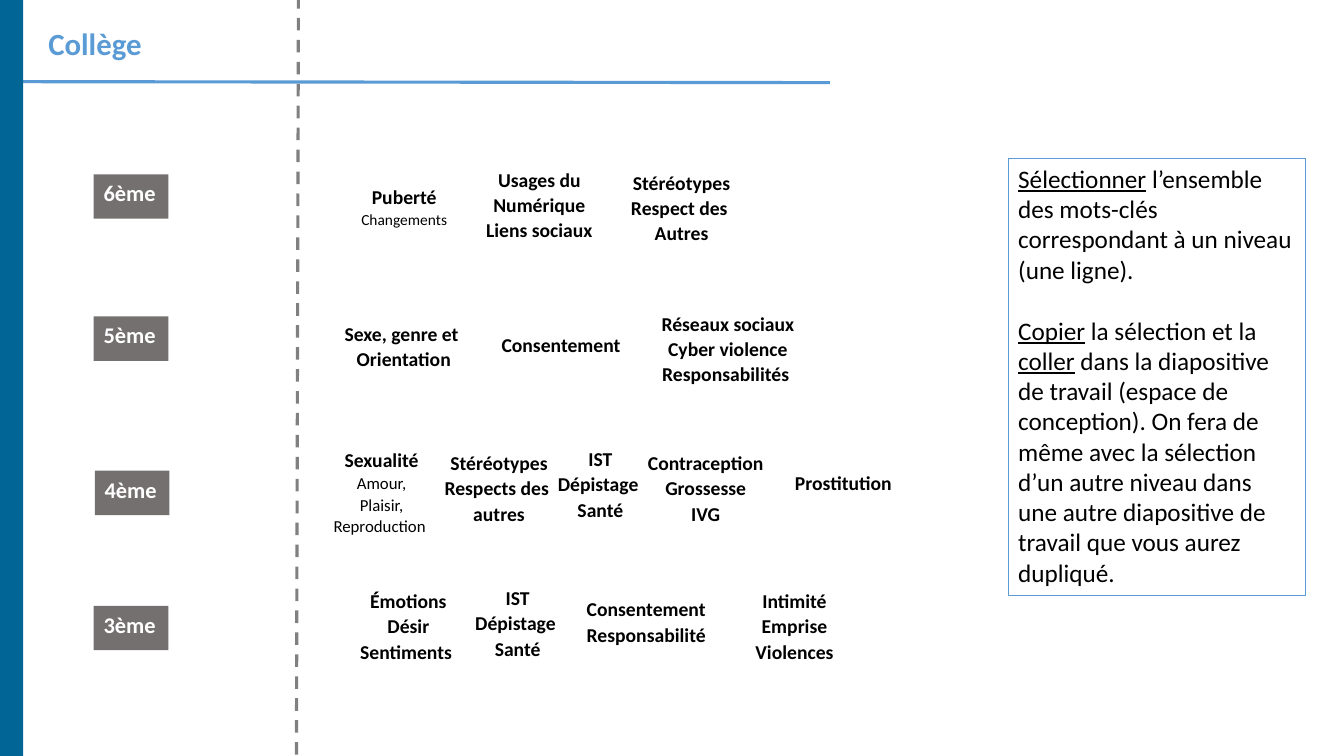
from lxml import etree
from pptx import Presentation
from pptx import util as u
from pptx.dml import color
from pptx.enum import dml, shapes, text
from pptx.oxml import ns

SCALE = 9144
FONT = "Calibri"
BLUE, GREY, TEAL = "5B9BD5", "747070", "016695"
BLACK, WHITE = "000000", "FFFFFF"
LEFT, MID = text.PP_ALIGN.LEFT, text.PP_ALIGN.CENTER

LABELS = [
    ("6ème", 93, 173),
    ("5ème", 93, 314),
    ("4ème", 94, 467),
    ("3ème", 93, 601),
]

TOPICS = [
    (348, 177, 106, ["Puberté"], ["Changements"], 11),
    (472, 160, 126, ["Usages du", "Numérique", "Liens sociaux"]),
    (617, 163, 118, ["Stéréotypes", "Respect des ", "Autres"]),
    (333, 313, 135, ["Sexe, genre et ", "Orientation"]),
    (487, 324, 139, ["Consentement"]),
    (646, 303, 152, ["Réseaux sociaux", "Cyber violence", "Responsabilités "]),
    (322, 438, 113, ["Sexualité"], ["Amour,", "Plaisir,", "Reproduction "], 12),
    (433, 441, 124, ["Stéréotypes", "Respects des ", "autres"]),
    (545, 437, 101, ["IST", "Dépistage ", "Santé"]),
    (632, 441, 136, ["Contraception", "Grossesse", "IVG"]),
    (778, 461, 117, ["Prostitution"]),
    (349, 578, 112, ["Émotions", "Désir", "Sentiments "]),
    (463, 575, 101, ["IST", "Dépistage ", "Santé"]),
    (739, 578, 98, ["Intimité", "Emprise", "Violences"]),
]

GUIDE = [
    [("Sélectionner", True),
     (" l’ensemble des mots-clés correspondant à un niveau (une ligne).", False)],
    [("Copier", True), (" la sélection et la ", False), ("coller", True),
     (" dans la diapositive de travail (espace de conception). On fera de "
      "même avec la sélection d’un autre niveau dans une autre diapositive "
      "de travail que vous aurez dupliqué.", False)],
]


def px(n):
    return u.Emu(n * SCALE)


def rgb(code):
    return color.RGBColor.from_string(code)


def add_run(para, words, size, tint=BLACK, bold=False, under=False):
    run = para.add_run()
    run.text = words
    font = run.font
    font.name, font.size = FONT, u.Pt(size)
    font.bold, font.underline = bold, under
    font.color.rgb = rgb(tint)


def next_para(frame, first, align):
    para = frame.paragraphs[0] if first else frame.add_paragraph()
    para.alignment = align
    return para


def add_title(slide, words):
    title = slide.shapes.title
    title.left, title.top, title.width, title.height = map(px, (38, -19, 114, 114))
    frame = title.text_frame
    frame.word_wrap = False
    frame.auto_size = text.MSO_AUTO_SIZE.NONE
    frame.vertical_anchor = text.MSO_ANCHOR.MIDDLE
    frame.margin_top = px(14)
    add_run(next_para(frame, True, LEFT), words, 22, BLUE, True)


def add_rule(slide, ends, tint, dash=None):
    rule = slide.shapes.add_connector(
        shapes.MSO_CONNECTOR.STRAIGHT, *map(px, ends))
    rule.line.color.rgb = rgb(tint)
    rule.line.width = u.Pt(2.25)
    if dash:
        rule.line.dash_style = dash
    props = rule._element.find(ns.qn("p:spPr"))
    etree.SubElement(props, ns.qn("a:effectLst"))


def add_rect(slide, area, fill, edge=None):
    rect = slide.shapes.add_shape(shapes.MSO_SHAPE.RECTANGLE, *map(px, area))
    rect.shadow.inherit = False
    rect.fill.solid()
    rect.fill.fore_color.rgb = rgb(fill)
    if edge:
        rect.line.color.rgb = rgb(edge)
        rect.line.width = u.Pt(1)
    else:
        rect.line.fill.background()
    frame = rect.text_frame
    frame.word_wrap = True
    frame.vertical_anchor = text.MSO_ANCHOR.TOP
    return frame


def add_label(slide, words, left, top):
    frame = add_rect(slide, (left, top, 74, 44), GREY)
    add_run(next_para(frame, True, LEFT), words, 16, WHITE, True)


def add_topic(slide, left, top, width, heads, notes=(), small=12, align=MID):
    box = slide.shapes.add_textbox(*map(px, (left, top, width, 92)))
    frame = box.text_frame
    frame.word_wrap = False
    frame.auto_size = text.MSO_AUTO_SIZE.NONE
    lines = [(head, 14, True) for head in heads]
    lines += [(note, small, False) for note in notes]
    for i, (words, size, bold) in enumerate(lines):
        para = next_para(frame, i == 0, align)
        para.line_spacing = 1.07
        add_run(para, words, size, BLACK, bold)


def add_guide(slide):
    frame = add_rect(slide, (1000, 157, 295, 434), WHITE, BLUE)
    for i, parts in enumerate(GUIDE):
        para = next_para(frame, i == 0, LEFT)
        para.space_before = u.Pt(22 if i else 0)
        for words, under in parts:
            add_run(para, words, 18, under=under)


def main():
    deck = Presentation()
    deck.slide_width, deck.slide_height = px(1333), px(750)
    slide = deck.slides.add_slide(deck.slide_layouts[5])
    add_rule(slide, (0, 81, 823, 82), BLUE)
    add_title(slide, "Collège")
    for topic in TOPICS:
        add_topic(slide, *topic)
    add_topic(slide, 572, 586, 139, ["Consentement", "Responsabilité"], align=LEFT)
    for label in LABELS:
        add_label(slide, *label)
    add_rule(slide, (296, -4, 294, 761), "808080", dml.MSO_LINE.DASH)
    add_guide(slide)
    add_rect(slide, (0, 0, 23, 750), TEAL)
    deck.save("out.pptx")


if __name__ == "__main__":
    main()
